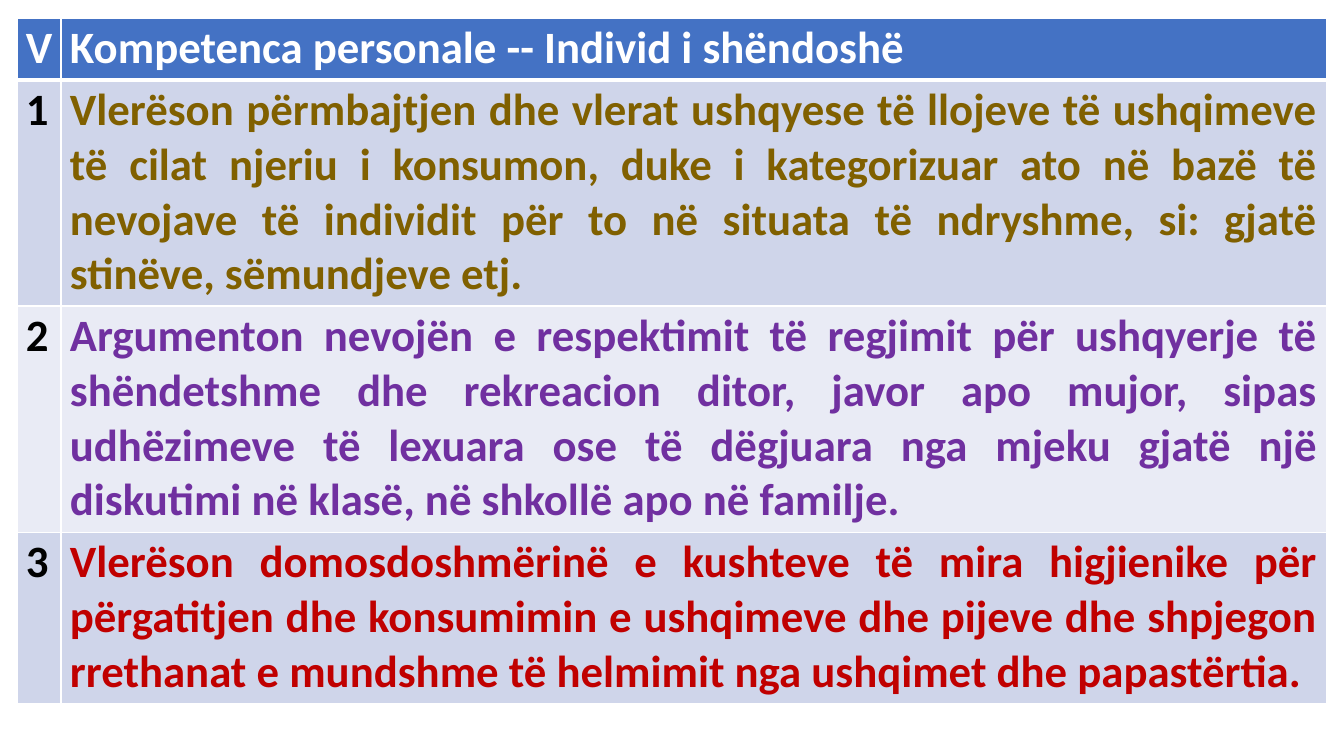
from dataclasses import dataclass

from lxml import etree
from pptx import Presentation
from pptx import util as u
from pptx.dml.color import RGBColor
from pptx.enum import text
from pptx.oxml import ns

EMU_PER_PX = 914400 / 100.8
FONT = "Calibri"
WHITE, BLACK = "FFFFFF", "000000"
HEADER_FILL = "4472C4"
BAND_FILLS = ("CFD5EA", "E9EBF5")
COLUMN_WIDTHS = (44, 1266)


@dataclass(frozen=True)
class Competence:
    label: str
    statement: str
    color: str
    height: int


HEADER = Competence("V", "Kompetenca personale -- Individ i shëndoshë", WHITE, 62)
COMPETENCES = (
    Competence(
        "1",
        "Vlerëson përmbajtjen dhe vlerat ushqyese të llojeve të ushqimeve të cilat "
        "njeriu i konsumon, duke i kategorizuar ato në bazë të nevojave të individit "
        "për to në situata të ndryshme, si: gjatë stinëve, sëmundjeve etj.",
        "806000", 226),
    Competence(
        "2",
        "Argumenton nevojën e respektimit të regjimit për ushqyerje të shëndetshme dhe "
        "rekreacion ditor, javor apo mujor, sipas udhëzimeve të lexuara ose të dëgjuara "
        "nga mjeku gjatë një diskutimi në klasë, në shkollë apo në familje.",
        "7030A0", 226),
    Competence(
        "3",
        "Vlerëson domosdoshmërinë e kushteve të mira higjienike për përgatitjen dhe "
        "konsumimin e ushqimeve dhe pijeve dhe shpjegon rrethanat e mundshme të "
        "helmimit nga ushqimet dhe papastërtia.",
        "C00000", 171),
)


def px(length: int) -> u.Emu:
    return u.Emu(round(length * EMU_PER_PX))


def rgb(color: str) -> RGBColor:
    return RGBColor.from_string(color)


def set_borders(cell, top: int, bottom: int) -> None:
    """Give a cell white borders; widths are in points."""
    properties = cell._tc.get_or_add_tcPr()
    for side, width in (("L", 1), ("R", 1), ("T", top), ("B", bottom)):
        line = etree.SubElement(properties, ns.qn(f"a:ln{side}"), w=str(u.Pt(width)))
        fill = etree.SubElement(line, ns.qn("a:solidFill"))
        etree.SubElement(fill, ns.qn("a:srgbClr"), val=WHITE)


def write_cell(cell, content: str, color: str, fill: str, align) -> None:
    cell.margin_left = cell.margin_right = px(9)
    cell.margin_top, cell.margin_bottom = px(3), px(4)
    cell.fill.solid()
    cell.fill.fore_color.rgb = rgb(fill)
    para = cell.text_frame.paragraphs[0]
    para.text = content
    para.alignment = align
    for span in para.runs:
        span.font.name = FONT
        span.font.size = u.Pt(32)
        span.font.bold = True
        span.font.color.rgb = rgb(color)


def add_competence_table(page) -> None:
    entries = (HEADER, *COMPETENCES)
    frame = page.shapes.add_table(
        len(entries), len(COLUMN_WIDTHS), px(17), px(18),
        px(sum(COLUMN_WIDTHS)), px(sum(entry.height for entry in entries)))
    table = frame.table
    for column, width in zip(table.columns, COLUMN_WIDTHS):
        column.width = px(width)

    for index, entry in enumerate(entries):
        is_header = index == 0
        table.rows[index].height = px(entry.height)
        fill = HEADER_FILL if is_header else BAND_FILLS[(index - 1) % 2]
        label_color = WHITE if is_header else BLACK
        align = text.PP_ALIGN.LEFT if is_header else text.PP_ALIGN.JUSTIFY
        label_cell, statement_cell = table.cell(index, 0), table.cell(index, 1)
        for cell in (label_cell, statement_cell):
            # The rule under the header is thicker than the others
            set_borders(cell, 3 if index == 1 else 1, 3 if is_header else 1)
        write_cell(label_cell, entry.label, label_color, fill, text.PP_ALIGN.LEFT)
        write_cell(statement_cell, entry.statement, entry.color, fill, align)


def main() -> None:
    deck = Presentation()
    deck.slide_width, deck.slide_height = px(1344), px(756)
    page = deck.slides.add_slide(deck.slide_layouts[6])
    add_competence_table(page)
    deck.save("out.pptx")


if __name__ == "__main__":
    main()
